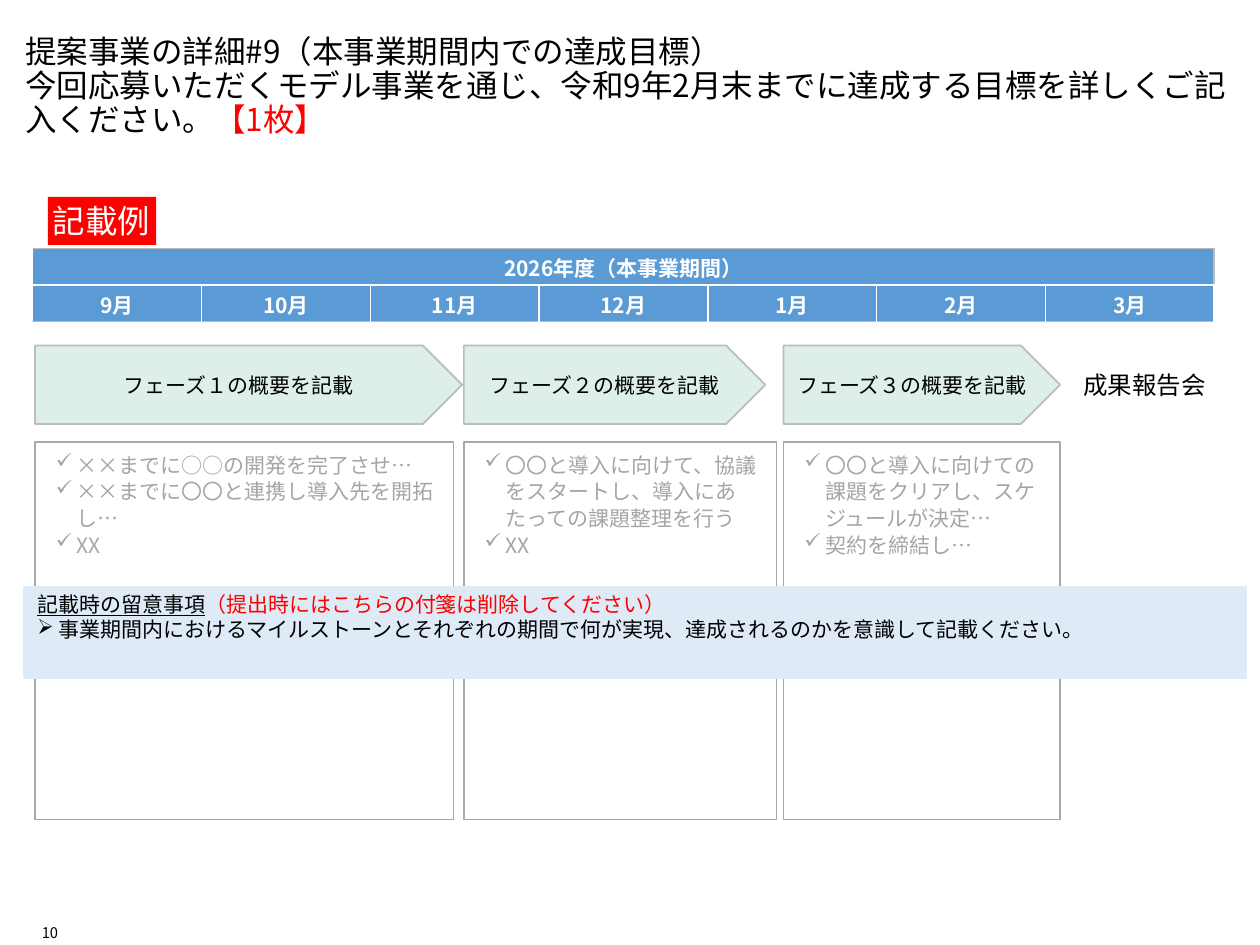
from lxml.etree import SubElement as Sub
from pptx import Presentation
from pptx.dml.color import RGBColor as RGB
from pptx.enum.shapes import MSO_SHAPE as Shape
from pptx.enum.text import MSO_ANCHOR as Anchor, PP_ALIGN as Align
from pptx.oxml.ns import qn
from pptx.util import Pt

NOTO = "Noto Sans CJK JP"
CHECK, ARROW = "ü", "Ø"  # Wingdings codes for the check mark and the arrowhead
COLORS = {
    "black": "000000", "white": "FFFFFF", "red": "FF0000", "head": "5B9BD5",
    "edge": "BBBBB8", "mint": "DDEFE8", "rim": "BBBCBC", "frame": "A7A8AA",
    "gray": "A5A5A5", "note": "DEEBF7",
}
HUE = {name: RGB.from_string(code) for name, code in COLORS.items()}


def write(par, text, size, color="black", face=NOTO, bullet=None, left=0, hang=0,
          bold=None, under=None):
    """Add one run, with a hanging bullet on its paragraph if asked."""
    if bullet:
        props = par._p.get_or_add_pPr()
        props.set("marL", str(Pt(left)))
        props.set("indent", str(-Pt(hang)))
        tint = Sub(props, qn("a:buClr"))
        Sub(tint, qn("a:srgbClr"), val=COLORS[color])
        Sub(props, qn("a:buFont"), typeface="Wingdings", pitchFamily="2", charset="2")
        Sub(props, qn("a:buChar"), char=bullet)
    run = par.add_run()
    run.text = text
    font = run.font
    font.size, font.name, font.bold, font.underline = Pt(size), face, bold, under
    font.color.rgb = HUE[color]
    Sub(font._element, qn("a:ea"), typeface=face)


def place(kind, box, fill=None, line=None, width=1, inset=(0, 0, 0, 0),
          anchor=Anchor.TOP, align=Align.LEFT):
    """Add a shape, or a text box if kind is None; return its text frame."""
    spot = [Pt(v) for v in box]
    if kind is None:
        item = slide.shapes.add_textbox(*spot)
    else:
        item = slide.shapes.add_shape(kind, *spot)
        item.shadow.inherit = False
        item.fill.solid()
        item.fill.fore_color.rgb = HUE[fill]
        if line:
            item.line.color.rgb = HUE[line]
            item.line.width = Pt(width)
        else:
            item.line.fill.background()
    frame = item.text_frame
    frame.word_wrap = True
    frame.vertical_anchor = anchor
    frame.margin_left, frame.margin_top, frame.margin_right, frame.margin_bottom = (
        Pt(v) for v in inset)
    frame.paragraphs[0].alignment = align
    return frame


deck = Presentation()
deck.slide_width, deck.slide_height = Pt(720), Pt(540)
slide = deck.slides.add_slide(deck.slide_layouts[6])

# Title
par = place(None, (14.4, 20.9, 692.6, 67.7)).paragraphs[0]
par.line_spacing = 0.9
write(par, "提案事業の詳細#9（本事業期間内での達成目標）", 18)
par.add_line_break()
write(par, "今回応募いただくモデル事業を通じ、令和9年2月末までに達成する目標を詳しくご記入ください。", 18)
write(par, "【1枚】", 18, "red")

# Page number
frame = place(None, (20.2, 524.9, 13, 13), anchor=Anchor.BOTTOM, align=Align.RIGHT)
write(frame.paragraphs[0], "10", 8.4)

# Calendar table
months = ["9月", "10月", "11月", "12月", "1月", "2月", "3月"]
count = len(months)
rows = [["2026年度（本事業期間）"] + [""] * (count - 1), months]
table = slide.shapes.add_table(
    2, count, Pt(18.7), Pt(142), Pt(675.2), Pt(41.8)).table
for col in table.columns:
    col.width = Pt(96.46)
for r, texts in enumerate(rows):
    table.rows[r].height = Pt(20.9)
    sides = {"lnL": "white", "lnR": "white" if r else "edge",
             "lnT": "white" if r else "edge", "lnB": "edge" if r else "white"}
    for c, text in enumerate(texts):
        cell = table.cell(r, c)
        cell.vertical_anchor = Anchor.MIDDLE
        cell.margin_left = cell.margin_right = Pt(2.9)
        cell.margin_top = cell.margin_bottom = 0
        for side, color in sides.items():
            edge = Sub(cell._tc.get_or_add_tcPr(), qn("a:" + side), w=str(Pt(1)))
            Sub(Sub(edge, qn("a:solidFill")), qn("a:srgbClr"), val=COLORS[color])
        cell.fill.solid()
        cell.fill.fore_color.rgb = HUE["head"]
        if text:
            par = cell.text_frame.paragraphs[0]
            par.alignment, par.line_spacing = Align.CENTER, 1.06
            write(par, text, 12, "white", bold=True)
table.cell(0, 0).merge(table.cell(0, count - 1))

# Phases: left, arrow width, detail width, heading, details
phases = [
    (20, 244.1, 239, "フェーズ１の概要を記載",
     ["××までに○○の開発を完了させ…", "××までに〇〇と連携し導入先を開拓し…", "XX"]),
    (265.1, 172.3, 178.6, "フェーズ２の概要を記載",
     ["〇〇と導入に向けて、協議をスタートし、導入にあたっての課題整理を行う", "XX"]),
    (447.8, 158, 158, "フェーズ３の概要を記載",
     ["〇〇と導入に向けての課題をクリアし、スケジュールが決定…", "契約を締結し…"]),
]
for left, wide, span, head, notes in phases:
    frame = place(Shape.PENTAGON, (left, 197.5, wide, 44.8), "mint", "rim",
                  anchor=Anchor.MIDDLE, align=Align.CENTER)
    write(frame.paragraphs[0], head, 12)
    frame = place(Shape.RECTANGLE, (left, 252.5, span, 215.7), "white", "frame", 0.75,
                  inset=(5, 5, 5, 5))
    for i, note in enumerate(notes):
        par = frame.add_paragraph() if i else frame.paragraphs[0]
        par.alignment, par.line_spacing = Align.LEFT, 1.06
        write(par, note, 12, "gray", bullet=CHECK, left=18.9, hang=12.2)

# Example tag
frame = place(Shape.RECTANGLE, (27.4, 112.5, 61.9, 27.5), "red",
              inset=(2.9, 2.9, 2.9, 2.9), anchor=Anchor.MIDDLE)
frame.word_wrap = False
write(frame.paragraphs[0], "記載例", 18.5, "white")

# Report meeting
frame = place(None, (612, 208, 87.8, 24.5), inset=(7.2, 3.6, 7.2, 3.6))
frame.word_wrap = False
write(frame.paragraphs[0], "成果報告会", 14, face="Calibri")

# Sticky note
frame = place(Shape.RECTANGLE, (13.7, 335.5, 698.2, 51.8), "note", "note",
              inset=(7.6, 2.6, 2.9, 2.9))
par = frame.paragraphs[0]
write(par, "記載時の留意事項", 12, under=True)
write(par, "（提出時にはこちらの付箋は削除してください）", 12, "red")
par = frame.add_paragraph()
par.alignment = Align.LEFT
write(par, "事業期間内におけるマイルストーンとそれぞれの期間で何が実現、達成されるのかを意識して記載ください。",
      12, bullet=ARROW, left=12.2, hang=12.2)

deck.save("out.pptx")
